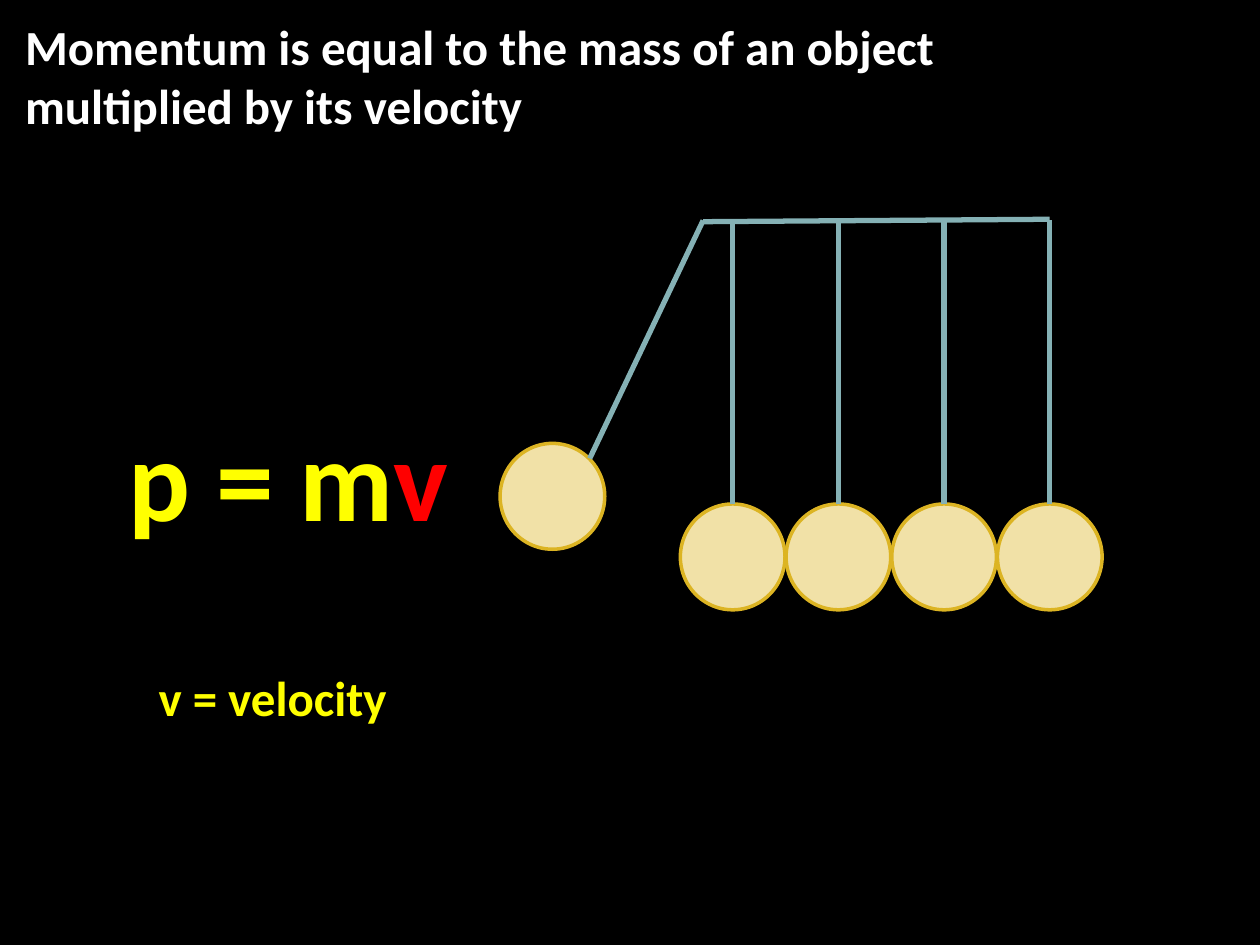
from pptx import Presentation
from pptx.dml.color import RGBColor
from pptx.enum.shapes import MSO_CONNECTOR as CONN, MSO_SHAPE as SHAPE
from pptx.enum.text import MSO_ANCHOR as ANCHOR, MSO_AUTO_SIZE as AUTO
from pptx.oxml.ns import qn
from pptx.util import Pt
from lxml import etree

BLACK = RGBColor(0x00, 0x00, 0x00)
WHITE = RGBColor(0xFF, 0xFF, 0xFF)
YELLOW = RGBColor(0xFF, 0xFF, 0x00)
RED = RGBColor(0xFF, 0x00, 0x00)
CREAM = RGBColor(0xF1, 0xE1, 0xA7)
GOLD = RGBColor(0xDC, 0xB4, 0x23)
TEAL = RGBColor(0x85, 0xB1, 0xB5)


def add_text(box, runs, size, wrap):
    sp = s.shapes.add_textbox(*map(Pt, box))
    tf = sp.text_frame
    tf.word_wrap = wrap
    tf.vertical_anchor = ANCHOR.MIDDLE if wrap else ANCHOR.TOP
    tf.auto_size = AUTO.NONE if wrap else AUTO.SHAPE_TO_FIT_TEXT
    p = tf.paragraphs[0]
    for text, color in runs:
        for i, line in enumerate(text.split("\n")):
            if i:
                p.add_line_break()
            r = p.add_run()
            r.text = line
            r.font.color.rgb = color
            for key, value in {"name": "Calibri", "size": Pt(size), "bold": True}.items():
                setattr(r.font, key, value)
    return sp


prs = Presentation()
prs.slide_width, prs.slide_height = Pt(720), Pt(540)
s = prs.slides.add_slide(prs.slide_layouts[6])
s.background.fill.solid()
s.background.fill.fore_color.rgb = BLACK

# Title
title = "Momentum is equal to the mass of an object \nmultiplied by its velocity"
add_text((7.2, 5.8, 707, 74.9), [(title, WHITE)], 28, True)

# Formula and legend on half-transparent black
for box, runs, size in [
    ((66.2, 228.2, 198, 87.1), [("p = m", YELLOW), ("v", RED)], 66),
    ((83.5, 378, 149.8, 41), [("v = velocity", YELLOW)], 28),
]:
    sp = add_text(box, runs, size, False)
    sp.fill.solid()
    sp.fill.fore_color.rgb = BLACK
    color = sp.fill._xPr.find(qn("a:solidFill"))[0]
    etree.SubElement(color, qn("a:alpha")).set("val", "50000")

# Balls: one swung out, four at rest
BALL_W, BALL_H, STEP = 59.8, 60.5, 60.4
rest_lefts = [388.8 + STEP * i for i in range(4)]
for left, top in [(285.8, 253.4)] + [(x, 288) for x in rest_lefts]:
    sp = s.shapes.add_shape(SHAPE.OVAL, Pt(left), Pt(top), Pt(BALL_W), Pt(BALL_H))
    sp.shadow.inherit = False
    sp.fill.solid()
    sp.fill.fore_color.rgb = CREAM
    sp.line.color.rgb = GOLD
    sp.line.width = Pt(2)

# Strings and top bar
strings = [(337, 262, 401.8, 126)]
strings += [(x + BALL_W / 2, 288, x + BALL_W / 2, 125.5) for x in rest_lefts]
bar = (401.8, 126.7, 599.8, 125.3)
for ends in strings + [bar]:
    ln = s.shapes.add_connector(CONN.STRAIGHT, *map(Pt, ends))
    ln.line.color.rgb = TEAL
    ln.line.width = Pt(3)
    etree.SubElement(ln._element.spPr, qn("a:effectLst"))

prs.save("out.pptx")
